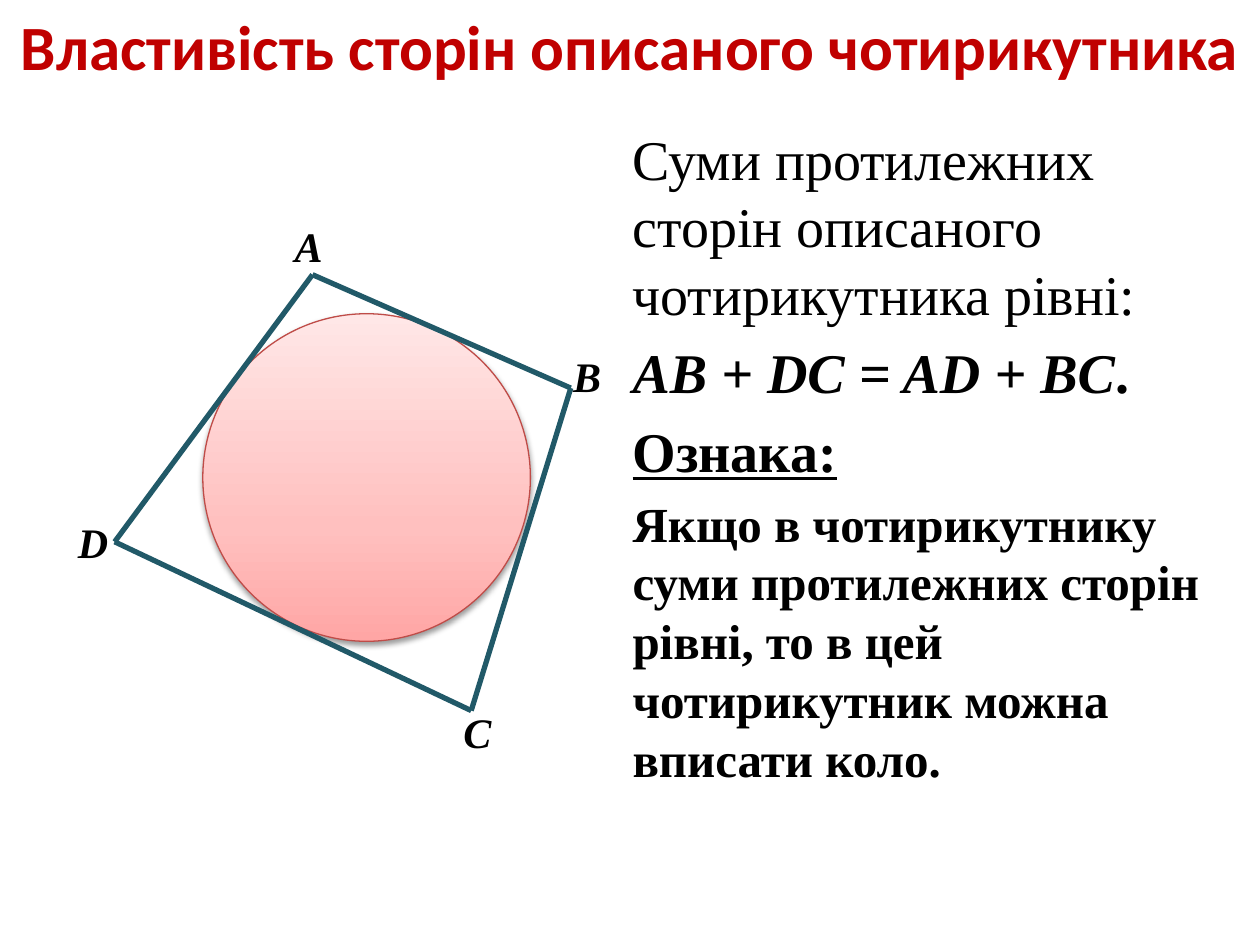
"""Build a slide on the sides of a tangential quadrilateral."""
from copy import deepcopy
from lxml import etree
from pptx import Presentation
from pptx.dml.color import RGBColor
from pptx.enum.shapes import MSO_CONNECTOR, MSO_SHAPE
from pptx.enum.text import MSO_ANCHOR, MSO_AUTO_SIZE, PP_ALIGN
from pptx.oxml import parse_xml
from pptx.oxml.ns import qn
from pptx.util import Inches, Pt

LINE, ELLIPSE = MSO_CONNECTOR.STRAIGHT, MSO_SHAPE.OVAL
MIDDLE, CENTER, NO_FIT = MSO_ANCHOR.MIDDLE, PP_ALIGN.CENTER, MSO_AUTO_SIZE.NONE

THEME = {
    "head_font": "Calibri", "font": "Times New Roman",
    "title": 36, "body": 32, "rule": 28, "label": 24,
    "red": "C00000", "black": "000000", "side": "215968", "rim": "BF4C48",
    "disc": [(0, "FFA6A5"), (0.35, "FFC0BF"), (1, "FFE7E7")],
}
TITLE = "Властивість сторін описаного чотирикутника"
BODY = [
    [("Суми протилежних сторін описаного чотирикутника рівні:", {})],
    [("AB + DC = AD + BC", {"bold": True, "italic": True}), (".", {"bold": True})],
    [("Ознака:", {"bold": True, "underline": True})],
    [("Якщо в чотирикутнику суми протилежних сторін рівні, "
      "то в цей чотирикутник можна вписати коло.", {"bold": True, "size": THEME["rule"]})],
]
VERTICES = [(2.48, 2.18), (4.53, 3.08), (3.74, 5.64), (0.91, 4.3)]
LABELS = [("А", 2.24, 1.7), ("В", 4.45, 2.73), ("С", 3.58, 5.56), ("D", 0.52, 4.05)]
CIRCLE = (1.61, 2.49, 2.6, 2.6)
SHADOW = ('<a:effectLst xmlns:a="http://schemas.openxmlformats.org/drawingml/2006/main">'
          '<a:outerShdw blurRad="40000" dist="20000" dir="5400000" rotWithShape="0">'
          '<a:srgbClr val="000000"><a:alpha val="38000"/></a:srgbClr>'
          '</a:outerShdw></a:effectLst>')


def rgb(value):
    return RGBColor.from_string(value)


def place(sp, *box):
    sp.left, sp.top, sp.width, sp.height = map(Inches, box)


def add_text(p, text, font=THEME["font"], size=THEME["body"], color=THEME["black"],
             bold=False, italic=False, underline=False):
    r = p.add_run()
    r.text = text
    f = r.font
    f.name, f.size, f.color.rgb = font, Pt(size), rgb(color)
    f.bold, f.italic, f.underline = bold, italic, underline


def add_title(s):
    sp = s.shapes.title
    place(sp, 0, 0, 10, 0.72)
    tf = sp.text_frame
    tf.auto_size, tf.vertical_anchor = NO_FIT, MIDDLE
    p = tf.paragraphs[0]
    p.alignment = CENTER
    add_text(p, TITLE, font=THEME["head_font"], size=THEME["title"],
             color=THEME["red"], bold=True)


def add_body(s):
    sp = s.placeholders[1]
    place(sp, 4.92, 0.94, 4.72, 5.76)
    tf = sp.text_frame
    tf.auto_size = NO_FIT
    for i, runs in enumerate(BODY):
        p = tf.add_paragraph() if i else tf.paragraphs[0]
        pPr = p._p.get_or_add_pPr()
        pPr.set("marL", "0")
        pPr.set("indent", "0")
        etree.SubElement(pPr, qn("a:buNone"))
        if not i:
            p.space_before = Pt(0)
        for text, style in runs:
            add_text(p, text, **style)


def add_circle(s):
    sp = s.shapes.add_shape(ELLIPSE, *map(Inches, CIRCLE))
    sp.fill.gradient()
    sp.fill.gradient_angle = 90
    stops = sp._element.spPr.find(qn("a:gradFill")).find(qn("a:gsLst"))
    stops.append(deepcopy(stops[0]))
    for stop, (position, color) in zip(sp.fill.gradient_stops, THEME["disc"]):
        stop.position, stop.color.rgb = position, rgb(color)
    sp.line.color.rgb, sp.line.width = rgb(THEME["rim"]), Pt(0.75)
    sp._element.spPr.append(parse_xml(SHADOW))


def add_sides(s):
    for start, end in zip(VERTICES, VERTICES[1:] + VERTICES[:1]):
        sp = s.shapes.add_connector(LINE, *map(Inches, start + end))
        sp.line.color.rgb, sp.line.width = rgb(THEME["side"]), Pt(3)
        etree.SubElement(sp._element.spPr, qn("a:effectLst"))


def add_labels(s):
    for text, left, top in LABELS:
        sp = s.shapes.add_textbox(*map(Inches, (left, top, 0.31, 0.5)))
        tf = sp.text_frame
        tf.word_wrap = True
        add_text(tf.paragraphs[0], text, size=THEME["label"], bold=True, italic=True)


def main():
    prs = Presentation()
    prs.slide_width, prs.slide_height = Inches(10), Inches(7.5)
    s = prs.slides.add_slide(prs.slide_layouts[1])
    for build in (add_title, add_body, add_circle, add_sides, add_labels):
        build(s)
    prs.save("out.pptx")


if __name__ == "__main__":
    main()
